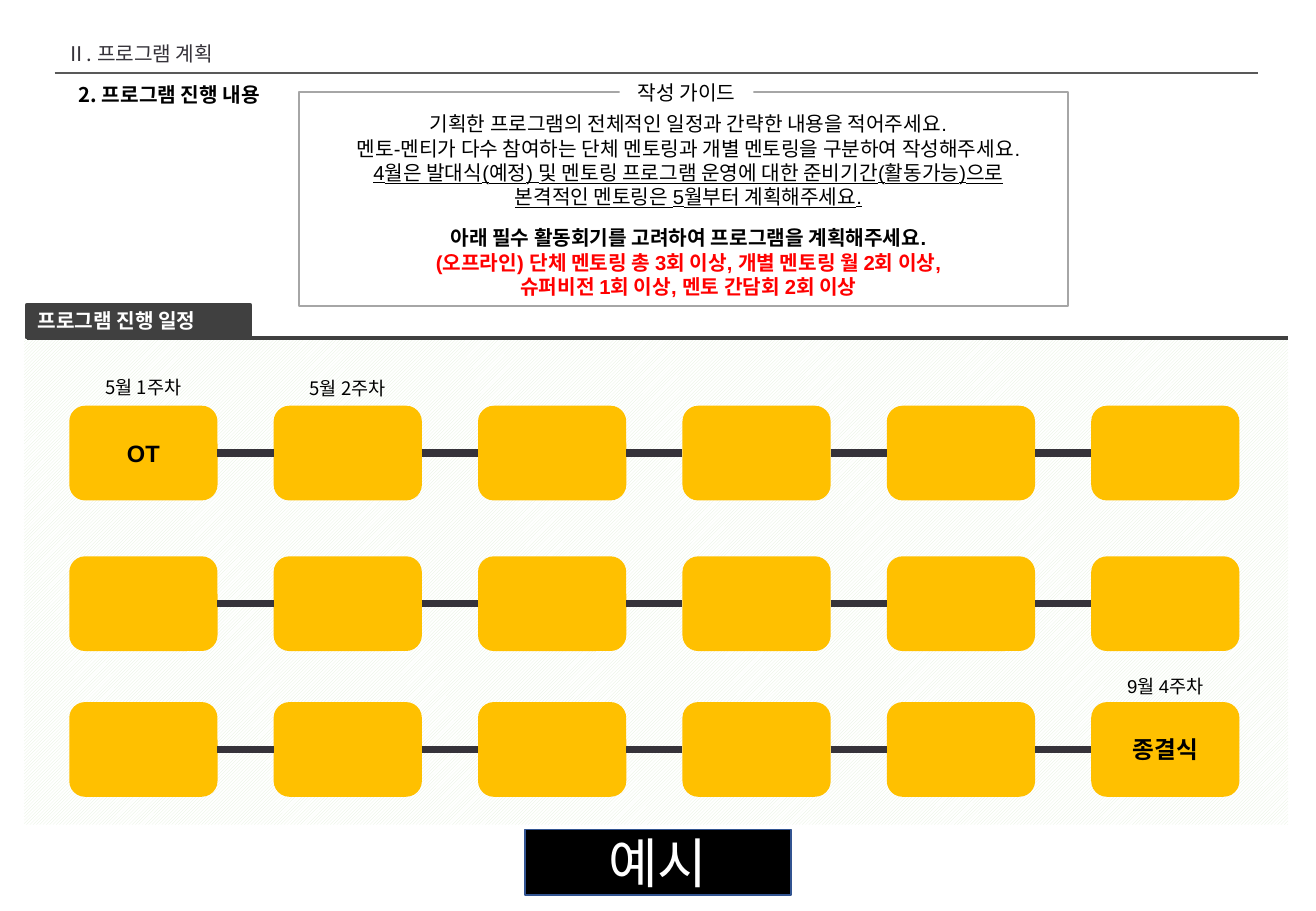
"""Build the mentoring programme schedule slide."""
from lxml import etree
from pptx import Presentation
from pptx import util as u
from pptx.dml.color import RGBColor
from pptx.enum import dml, shapes, text
from pptx.oxml.ns import qn

WHITE = RGBColor(0xFF, 0xFF, 0xFF)
BLACK = RGBColor(0x00, 0x00, 0x00)
RED = RGBColor(0xFF, 0x00, 0x00)
AMBER = RGBColor(0xFF, 0xC0, 0x00)
PALE_GREEN = RGBColor(0xE2, 0xF0, 0xD9)
CHARCOAL = RGBColor(0x40, 0x40, 0x40)
INK = RGBColor(0x36, 0x33, 0x3A)
RULE_GREY = RGBColor(0x59, 0x59, 0x59)
FRAME_GREY = RGBColor(0xA6, 0xA6, 0xA6)
NAVY = RGBColor(0x32, 0x54, 0x91)
ARIAL = "Arial"
NOTO = "Noto Sans CJK KR"
LEFT, CENTER = text.PP_ALIGN.LEFT, text.PP_ALIGN.CENTER
TOP, MIDDLE, BOTTOM = text.MSO_ANCHOR.TOP, text.MSO_ANCHOR.MIDDLE, text.MSO_ANCHOR.BOTTOM
RECT = shapes.MSO_SHAPE.RECTANGLE
ROUNDED = shapes.MSO_SHAPE.ROUNDED_RECTANGLE

deck = Presentation()
deck.slide_width, deck.slide_height = u.Inches(10.83), u.Inches(7.5)
page = deck.slides.add_slide(deck.slide_layouts[6])


def add_box(kind, place, fill=None, line=None, width=1):
    box = page.shapes.add_shape(kind, *map(u.Inches, place))
    box.shadow.inherit = False
    if fill is None:
        box.fill.background()
    else:
        box.fill.solid()
        box.fill.fore_color.rgb = fill
    if line is None:
        box.line.fill.background()
    else:
        box.line.color.rgb = line
        box.line.width = u.Pt(width)
    return box


def add_span(para, wording, size, face, colour=BLACK, bold=False, align=CENTER):
    para.alignment = align
    span = para.add_run()
    span.text = wording
    span.font.size = u.Pt(size)
    span.font.name = face
    span.font.bold = bold
    span.font.color.rgb = colour
    etree.SubElement(span.font._element, qn("a:ea"), typeface=NOTO)
    return span


backdrop = add_box(RECT, (0.2, 2.79, 10.4, 4))
backdrop.fill.patterned()
backdrop.fill.pattern = dml.MSO_PATTERN.LIGHT_UPWARD_DIAGONAL
backdrop.fill.fore_color.rgb = PALE_GREEN
backdrop.fill.back_color.rgb = WHITE

add_box(RECT, (0.22, 2.51, 1.84, 0.27), CHARCOAL, CHARCOAL, 2.25)
add_box(RECT, (2.46, 0.76, 6.33, 1.76), None, FRAME_GREY)

guide_label = add_box(RECT, (5.1, 0.61, 1.1, 0.3), WHITE)
guide_label.text_frame.word_wrap = False
guide_label.text_frame.vertical_anchor = MIDDLE
add_span(guide_label.text_frame.paragraphs[0], "작성 가이드", 12, ARIAL)

example = add_box(RECT, (4.32, 6.83, 2.19, 0.54), BLACK, NAVY)
example.text_frame.vertical_anchor = MIDDLE
add_span(example.text_frame.paragraphs[0], "예시", 32, NOTO, WHITE)

labels = [
    ("프로그램 진행 일정", (0.21, 2.49, 1.85, 0.3), 12, NOTO, WHITE, True, LEFT, MIDDLE, 1.0),
    ("Ⅱ. 프로그램 계획", (0.45, 0.21, 1.54, 0.38), 12, NOTO, INK, False, LEFT, BOTTOM, 0.9),
    ("2. 프로그램 진행 내용", (0.55, 0.65, 3.75, 0.32), 12, NOTO, BLACK, True, LEFT, TOP, 0.9),
    ("5월 1주차", (0.57, 3.04, 1.22, 0.29), 11, NOTO, BLACK, False, CENTER, MIDDLE, 1.0),
    ("5월 2주차", (2.25, 3.05, 1.22, 0.29), 11, NOTO, BLACK, False, CENTER, MIDDLE, 1.0),
    ("9월 4주차", (8.98, 5.5, 1.22, 0.29), 11, ARIAL, BLACK, False, CENTER, MIDDLE, 1.0),
]
for wording, place, size, face, colour, bold, align, anchor, spacing in labels:
    frame = page.shapes.add_textbox(*map(u.Inches, place)).text_frame
    frame.word_wrap = True
    frame.vertical_anchor = anchor
    frame.paragraphs[0].line_spacing = spacing
    add_span(frame.paragraphs[0], wording, size, face, colour, bold, align)

guide_lines = [
    ("기획한 프로그램의 전체적인 일정과 간략한 내용을 적어주세요.", BLACK, False, False, 0),
    ("멘토-멘티가 다수 참여하는 단체 멘토링과 개별 멘토링을 구분하여 작성해주세요.", BLACK, False, False, 0),
    ("4월은 발대식(예정) 및 멘토링 프로그램 운영에 대한 준비기간(활동가능)으로", BLACK, False, True, 0),
    ("본격적인 멘토링은 5월부터 계획해주세요.", BLACK, False, True, 0),
    ("아래 필수 활동회기를 고려하여 프로그램을 계획해주세요.", BLACK, True, False, 10),
    ("(오프라인) 단체 멘토링 총 3회 이상, 개별 멘토링 월 2회 이상,", RED, True, False, 0),
    ("슈퍼비전 1회 이상, 멘토 간담회 2회 이상", RED, True, False, 0),
]
guide = page.shapes.add_textbox(*map(u.Inches, (2.42, 0.87, 6.49, 1.65))).text_frame
guide.word_wrap = True
for index, (wording, colour, bold, underlined, gap) in enumerate(guide_lines):
    para = guide.add_paragraph() if index else guide.paragraphs[0]
    para.line_spacing = u.Pt(14.4)
    para.space_before = u.Pt(gap)
    add_span(para, wording, 12, ARIAL, colour, bold).font.underline = underlined

links = [
    ((0.22, 2.78), (10.6, 2.78), CHARCOAL, 2.25, None),
    ((0.45, 0.6), (10.35, 0.6), RULE_GREY, 1.5, None),
]
milestones = {(0, 0): "OT", (2, 5): "종결식"}
for row, top in enumerate((3.34, 4.58, 5.78)):
    previous = None
    for column in range(6):
        left = 0.57 + 8.41 * column / 5
        week = add_box(ROUNDED, (left, top, 1.22, 0.78), AMBER)
        if (row, column) in milestones:
            week.text_frame.vertical_anchor = MIDDLE
            add_span(week.text_frame.paragraphs[0], milestones[row, column], 14, ARIAL, bold=True)
        if previous is not None:
            middle = top + 0.39
            links.append(((left - 0.46, middle), (left, middle), INK, 4.5, (previous, week)))
        previous = week

for start, end, colour, width, ends in links:
    line = page.shapes.add_connector(
        shapes.MSO_CONNECTOR.STRAIGHT, *map(u.Inches, start + end))
    line.line.color.rgb = colour
    line.line.width = u.Pt(width)
    etree.SubElement(line._element.spPr, qn("a:effectLst"))
    if ends:
        line.begin_connect(ends[0], 3)
        line.end_connect(ends[1], 1)

deck.save("out.pptx")
